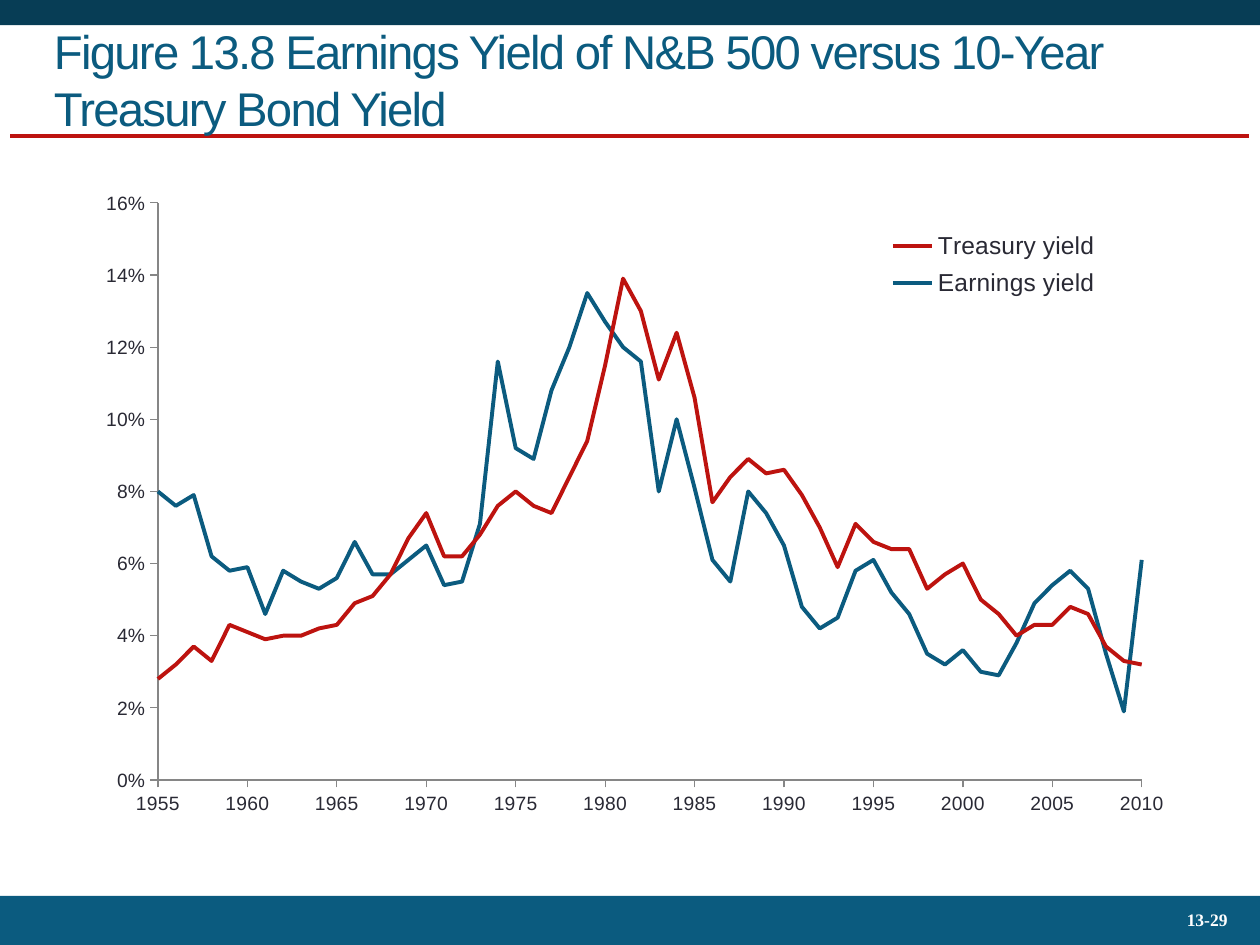
from lxml import etree
from pptx import Presentation
from pptx import util as u
from pptx.chart.data import XyChartData
from pptx.dml.color import RGBColor
from pptx.enum import chart as ch, shapes, text
from pptx.oxml.ns import qn

NAVY, BLUE, RED, INK, GREY = "073D55", "0B5B7F", "BD130F", "292934", "868686"
FIRST_YEAR, LAST_YEAR = 1955, 2010

# Yields in tenths of a percent, one value a year
TREASURY = [
    28, 32, 37, 33, 43, 41, 39, 40, 40, 42, 43, 49, 51, 57, 67, 74, 62, 62, 68,
    76, 80, 76, 74, 84, 94, 115, 139, 130, 111, 124, 106, 77, 84, 89, 85, 86, 79,
    70, 59, 71, 66, 64, 64, 53, 57, 60, 50, 46, 40, 43, 43, 48, 46, 37, 33, 32]
EARNINGS = [
    80, 76, 79, 62, 58, 59, 46, 58, 55, 53, 56, 66, 57, 57, 61, 65, 54, 55, 71,
    116, 92, 89, 108, 120, 135, 127, 120, 116, 80, 100, 81, 61, 55, 80, 74, 65, 48,
    42, 45, 58, 61, 52, 46, 35, 32, 36, 30, 29, 38, 49, 54, 58, 53, 35, 19, 61]
SERIES = [("Treasury yield", TREASURY, RED), ("Earnings yield", EARNINGS, BLUE)]


def color(value):
    return RGBColor.from_string(value)


def inches(*lengths):
    return [u.Inches(length) for length in lengths]


def add_band(page, box, fill):
    band = page.shapes.add_shape(shapes.MSO_SHAPE.RECTANGLE, *inches(*box))
    band.shadow.inherit = False
    band.fill.solid()
    band.fill.fore_color.rgb = color(fill)
    band.line.fill.background()


def add_rule(page, left, top, right):
    rule = page.shapes.add_connector(
        shapes.MSO_CONNECTOR.STRAIGHT, *inches(left, top, right, top))
    rule.line.color.rgb = color(RED)
    rule.line.width = u.Pt(2.25)
    etree.SubElement(rule._element.spPr, qn("a:effectLst"))


def add_text(page, box, words, size, face, ink):
    """Add one vertically centred paragraph; return it with its run."""
    frame = page.shapes.add_textbox(*inches(*box)).text_frame
    frame.word_wrap = True
    frame.vertical_anchor = text.MSO_ANCHOR.MIDDLE
    frame.margin_top = frame.margin_bottom = u.Inches(0.05)
    para = frame.paragraphs[0]
    span = para.add_run()
    span.text = words
    span.font.size = u.Pt(size)
    span.font.name = face
    span.font.color.rgb = color(ink)
    return para, span


def add_title(page, box, words):
    _, span = add_text(page, box, words, 27, "Arial", BLUE)
    span.font._element.set("spc", "-100")


def add_page_number(page, box, words):
    para, span = add_text(page, box, words, 10, "Times New Roman", "FFFFFF")
    para.alignment = text.PP_ALIGN.RIGHT
    para.line_spacing = 0.93
    span.font.bold = True


def set_layout(parent, position, box, inner=False):
    """Give a chart part a manual layout, in fractions of the chart."""
    for old in parent.findall(qn("c:layout")):
        parent.remove(old)
    layout = etree.Element(qn("c:layout"))
    manual = etree.SubElement(layout, qn("c:manualLayout"))
    settings = [("layoutTarget", "inner")] if inner else []
    settings += [("xMode", "edge"), ("yMode", "edge")]
    settings += zip("xywh", box)
    for name, value in settings:
        etree.SubElement(manual, qn(f"c:{name}")).set("val", str(value))
    parent.insert(position, layout)


def style_axis(axis, low, high, step, number_format):
    axis.minimum_scale, axis.maximum_scale, axis.major_unit = low, high, step
    axis.has_major_gridlines = False
    axis.major_tick_mark = ch.XL_TICK_MARK.OUTSIDE
    axis.minor_tick_mark = ch.XL_TICK_MARK.NONE
    axis.tick_labels.number_format = number_format
    axis.tick_labels.number_format_is_linked = False
    axis.tick_labels.font.size = u.Pt(11)
    axis.format.line.color.rgb = color(GREY)
    axis.format.line.width = u.Pt(0.75)


def add_yield_chart(page, box):
    data = XyChartData()
    for name, tenths, _ in SERIES:
        points = data.add_series(name)
        for year, tenth in enumerate(tenths, FIRST_YEAR):
            points.add_data_point(year, tenth / 1000)
    chart = page.shapes.add_chart(
        ch.XL_CHART_TYPE.XY_SCATTER_LINES_NO_MARKERS, *inches(*box), data).chart
    chart.has_title = False
    chart.font.name = "Arial"
    chart.font.size = u.Pt(10)
    chart.font.color.rgb = color(INK)
    chart.plots[0].vary_by_categories = False
    for series, (_, _, ink) in zip(chart.plots[0].series, SERIES):
        series.smooth = False
        series.marker.style = ch.XL_MARKER_STYLE.NONE
        series.format.line.color.rgb = color(ink)
        series.format.line.width = u.Pt(2.25)

    style_axis(chart.category_axis, FIRST_YEAR, LAST_YEAR, 5, "General")
    style_axis(chart.value_axis, 0, 0.16, 0.02, "0%")
    plot_area = chart.value_axis._element.getparent()
    set_layout(plot_area, 0, (0.099, 0.051, 0.837, 0.833), inner=True)

    chart.has_legend = True
    chart.legend.position = ch.XL_LEGEND_POSITION.RIGHT
    chart.legend.include_in_layout = False
    chart.legend.font.size = u.Pt(14)
    set_layout(chart.legend._element, 1, (0.715, 0.08, 0.19, 0.12))


def main():
    deck = Presentation()
    deck.slide_width, deck.slide_height = inches(10, 7.5)
    page = deck.slides.add_slide(deck.slide_layouts[6])
    add_band(page, (0, 0, 10, 0.2), NAVY)
    add_rule(page, 0.08, 1.08, 9.91)
    add_band(page, (0, 7.11, 10, 0.4), BLUE)
    add_page_number(page, (8.67, 7.13, 1.17, 0.36), "13-29")
    add_title(page, (0.33, 0.17, 9.35, 0.91),
              "Figure 13.8 Earnings Yield of N&B 500 versus 10-Year "
              "Treasury Bond Yield")
    add_yield_chart(page, (0.33, 1.33, 9.33, 5.5))
    deck.save("out.pptx")


if __name__ == "__main__":
    main()
